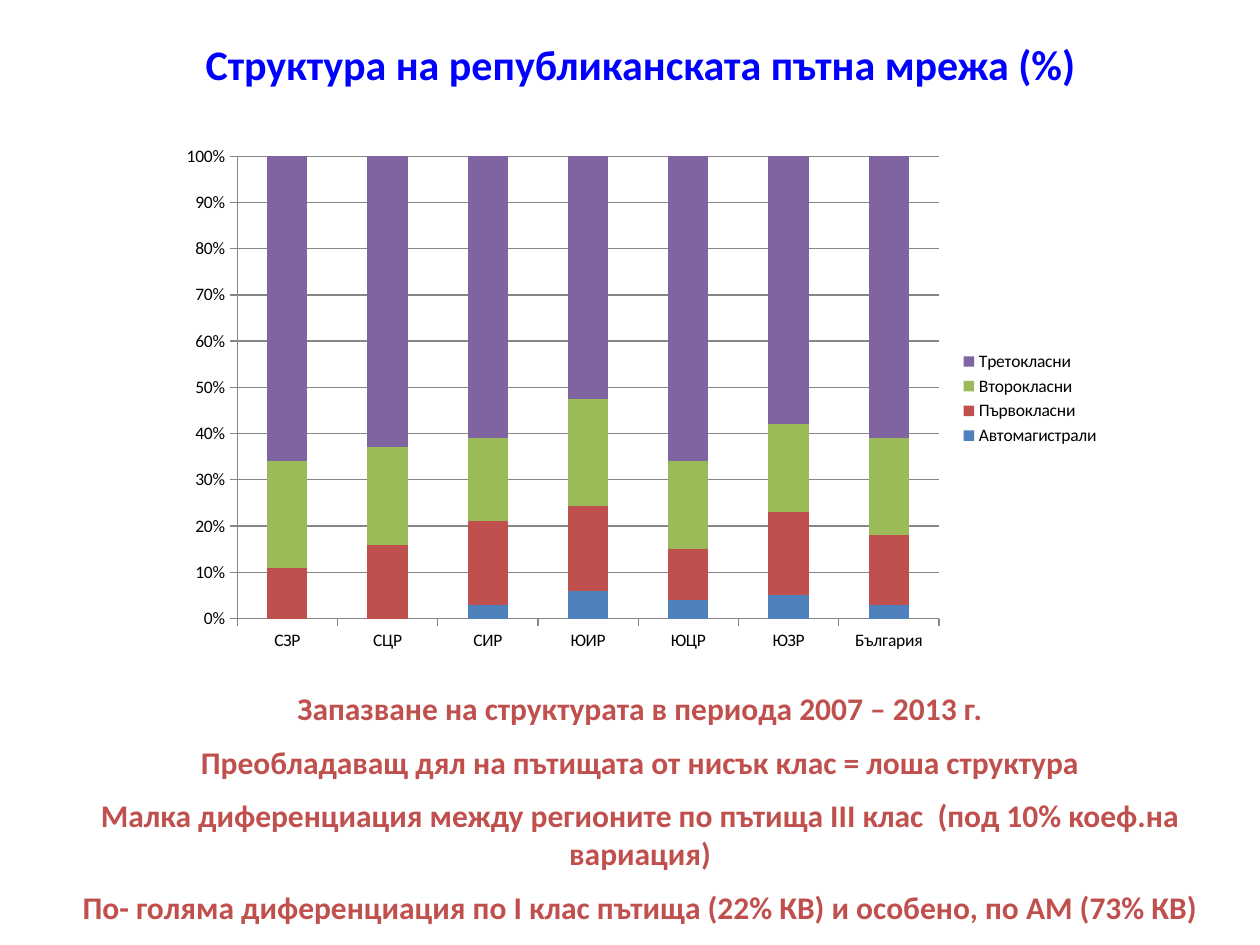
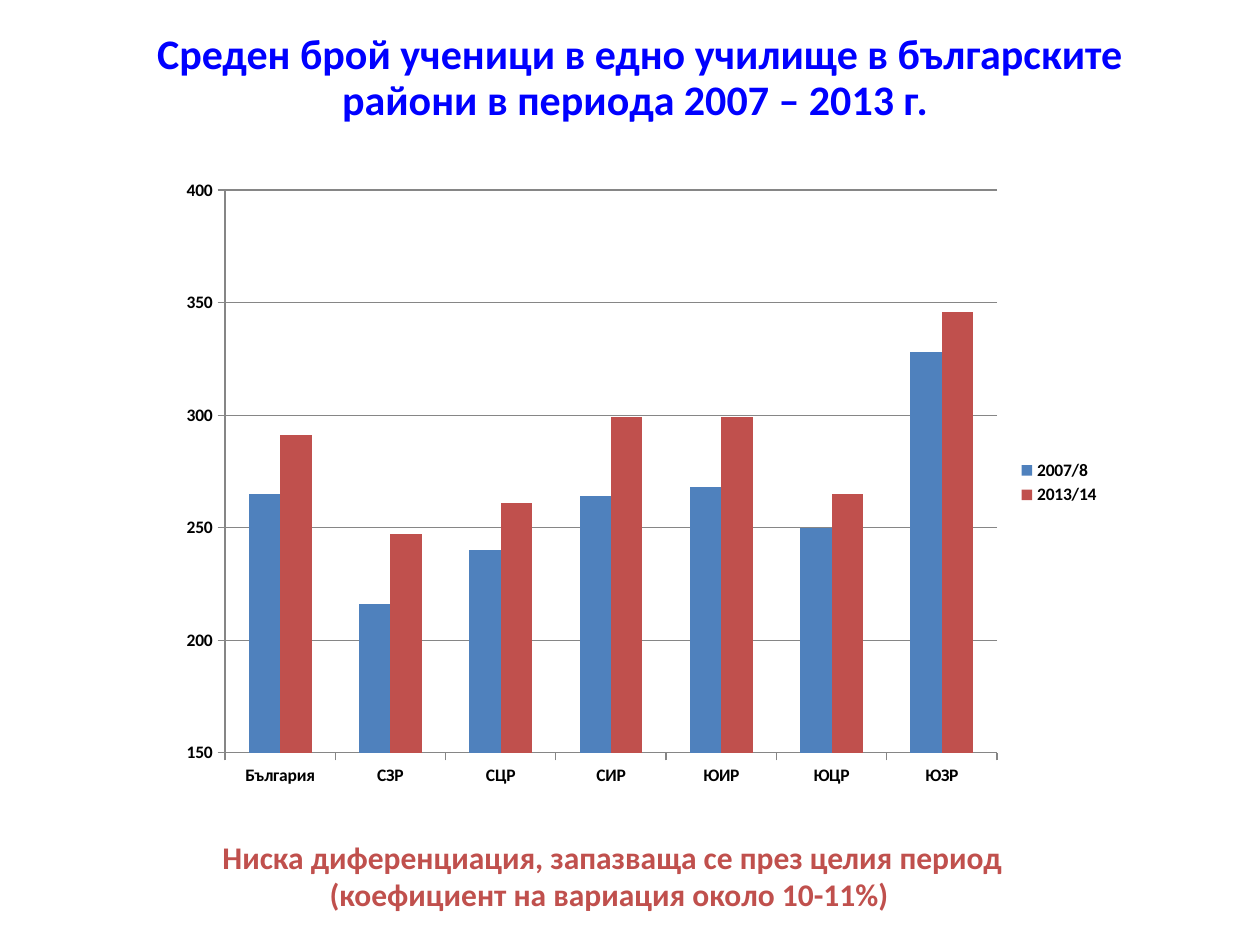
from dataclasses import dataclass

from pptx import Presentation
from pptx.chart.data import CategoryChartData
from pptx.dml.color import RGBColor
from pptx.enum import chart as ch, text
from pptx.util import Cm, Pt


@dataclass(frozen=True)
class Theme:
    font: str = "Calibri"
    title_color: str = "0000FF"
    note_color: str = "C0504D"
    axis_text: str = "000000"
    grid_line: str = "868686"
    series: tuple = ("4F81BD", "C0504D", "9BBB59", "8064A2")
    title_size: int = 24
    note_size: int = 18
    chart_size: int = 10


T = Theme()


def apply(obj, **values):
    for name, value in values.items():
        setattr(obj, name, value)


def style_font(font, size, color, bold):
    apply(font, name=T.font, size=Pt(size), bold=bold)
    font.color.rgb = RGBColor.from_string(color)


def add_text(s, box, lines, size, color, gap=0, wrap=True,
             anchor=text.MSO_ANCHOR.TOP, spacing=None):
    """Centred bold text, with a gap in points between paragraphs."""
    tf = s.shapes.add_textbox(*map(Cm, box)).text_frame
    apply(tf, word_wrap=wrap, vertical_anchor=anchor)
    for i, line in enumerate(lines):
        p = tf.add_paragraph() if i else tf.paragraphs[0]
        apply(p, alignment=text.PP_ALIGN.CENTER, line_spacing=spacing,
              space_before=Pt(gap if i else 0))
        r = p.add_run()
        r.text = line
        style_font(r.font, size, color, True)


def add_title(s, box, line, spacing):
    add_text(s, box, [line], T.title_size, T.title_color,
             anchor=text.MSO_ANCHOR.MIDDLE, spacing=spacing)


def add_notes(s, box, lines, **options):
    add_text(s, box, lines, T.note_size, T.note_color, **options)


def add_columns(s, box, kind, cats, series, number_format, bold=False,
                overlap=0, **scale):
    """Column chart with horizontal grid lines and a legend on the right."""
    data = CategoryChartData()
    data.categories = cats
    for name, values in series.items():
        data.add_series(name, values)
    chart = s.shapes.add_chart(kind, *map(Cm, box), data).chart
    apply(chart, has_title=False, has_legend=True)
    style_font(chart.font, T.chart_size, T.axis_text, bold)
    apply(chart.legend, position=ch.XL_LEGEND_POSITION.RIGHT,
          include_in_layout=False)

    # Axes
    line_color = RGBColor.from_string(T.grid_line)
    value_axis = chart.value_axis
    for axis in (chart.category_axis, value_axis):
        apply(axis, major_tick_mark=ch.XL_TICK_MARK.OUTSIDE,
              minor_tick_mark=ch.XL_TICK_MARK.NONE)
        axis.format.line.color.rgb = line_color
    apply(value_axis, has_major_gridlines=True, **scale)
    value_axis.major_gridlines.format.line.color.rgb = line_color
    apply(value_axis.tick_labels, number_format=number_format,
          number_format_is_linked=False)

    # Columns
    plot = chart.plots[0]
    apply(plot, gap_width=150, overlap=overlap, vary_by_categories=False)
    for column, color in zip(plot.series, T.series):
        column.invert_if_negative = False
        column.format.fill.solid()
        column.format.fill.fore_color.rgb = RGBColor.from_string(color)


def road_slide(s):
    add_title(s, (1.8, 0.64, 22.23, 1.47),
              "Структура на републиканската пътна мрежа (%)", 0.8)
    add_notes(s, (0.84, 13.77, 24.13, 5.26), [
        "Запазване на структурата в периода 2007 – 2013 г.",
        "Преобладаващ дял на пътищата от нисък клас = лоша структура",
        "Малка диференциация между регионите по пътища ІІІ клас  "
        "(под 10% коеф.на вариация)",
        "По- голяма диференциация по І клас пътища (22% КВ) и особено, "
        "по АМ (73% КВ)",
    ], gap=9)
    add_columns(
        s, (3.38, 2.74, 19.05, 10.59), ch.XL_CHART_TYPE.COLUMN_STACKED_100,
        ["СЗР", "СЦР", "СИР", "ЮИР", "ЮЦР", "ЮЗР", "България"],
        {"Автомагистрали": (0, 0, 3, 6, 4, 5, 3),
         "Първокласни": (11, 16, 18, 18, 11, 18, 15),
         "Второкласни": (23, 21, 18, 23, 19, 19, 21),
         "Третокласни": (66, 63, 61, 52, 66, 58, 61)},
        "0%", overlap=100)


def school_slide(s):
    add_title(s, (1.47, 0, 22.86, 3.18),
              "Среден брой ученици в едно училище в българските райони "
              "в периода 2007 – 2013 г. ", 0.9)
    add_columns(
        s, (3.38, 3.38, 19.05, 12.7), ch.XL_CHART_TYPE.COLUMN_CLUSTERED,
        ["България", "СЗР", "СЦР", "СИР", "ЮИР", "ЮЦР", "ЮЗР"],
        {"2007/8": (265, 216, 240, 264, 268, 250, 328),
         "2013/14": (291, 247, 261, 299, 299, 265, 346)},
        "General", bold=True, minimum_scale=150, maximum_scale=400,
        major_unit=50)
    add_notes(s, (4.17, 16.76, 16.36, 1.8), [
        "Ниска диференциация, запазваща се през целия период ",
        "(коефициент на вариация около 10-11%) ",
    ], wrap=False)


def main():
    prs = Presentation()
    apply(prs, slide_width=Cm(25.4), slide_height=Cm(19.05))
    for build in (road_slide, school_slide):
        build(prs.slides.add_slide(prs.slide_layouts[6]))
    prs.save("out.pptx")


if __name__ == "__main__":
    main()
